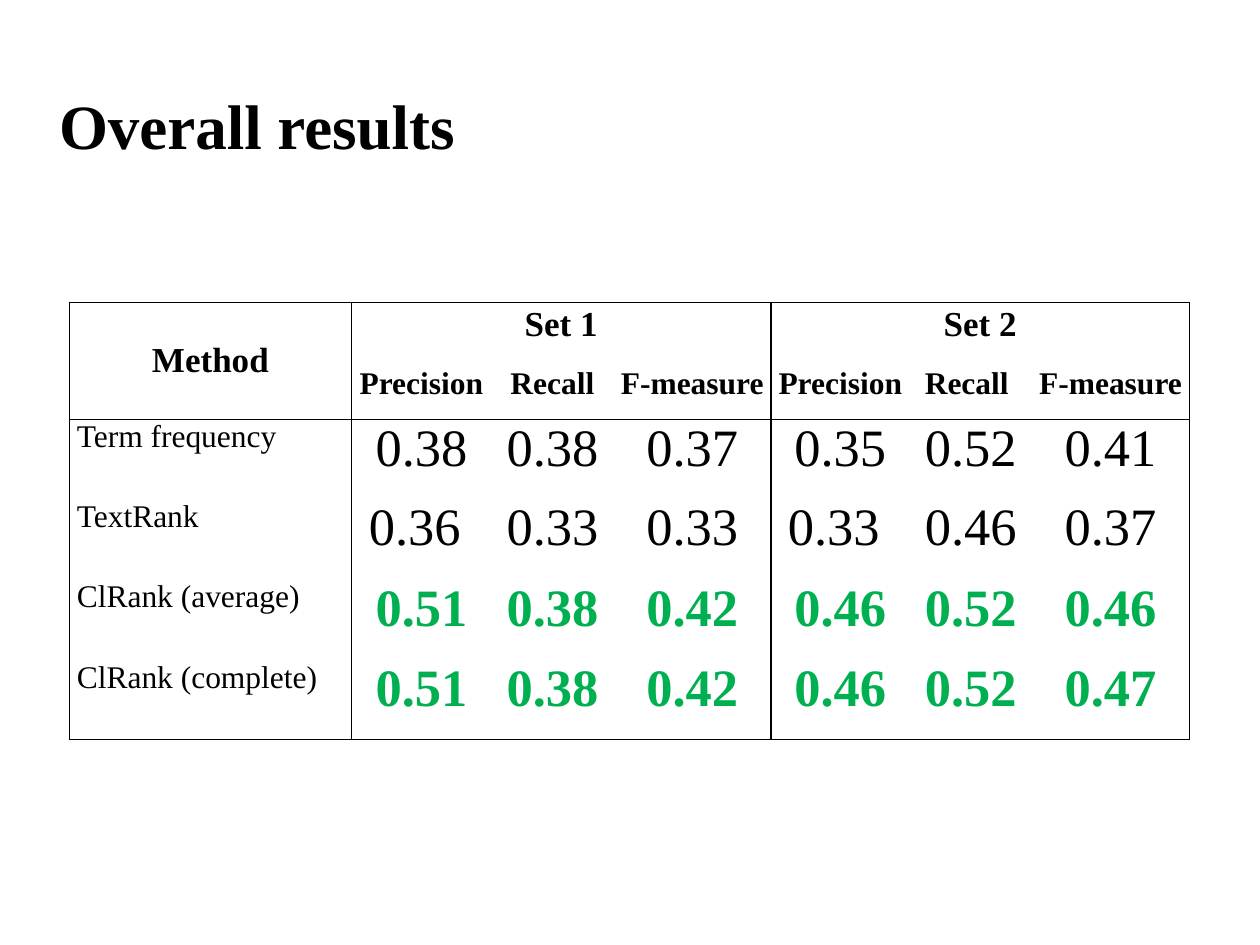
from dataclasses import dataclass

from lxml.etree import SubElement
from pptx import Presentation
from pptx.dml.color import RGBColor
from pptx.enum.text import MSO_ANCHOR, PP_ALIGN
from pptx.oxml.ns import qn
from pptx.util import Inches, Pt

BLACK, GREEN = "000000", "00B050"
WIDTHS = [2.24, 1.11, 0.97, 1.25, 1.1, 0.97, 1.25]
HEIGHTS = [0.36, 0.57, 0.63, 0.64, 0.64, 0.63]
LEFTS, RIGHTS = (0, 1, 4), (0, 3, 6)
TOPS, ENDS = (0, 2), (1, 5)


@dataclass(frozen=True)
class Style:
    size: int
    bold: bool = False
    color: str = BLACK
    align: PP_ALIGN = PP_ALIGN.CENTER
    anchor: MSO_ANCHOR = MSO_ANCHOR.TOP


@dataclass(frozen=True)
class Method:
    name: str
    scores: tuple[str, ...]
    best: bool = False


TITLE = Style(36, True, align=PP_ALIGN.LEFT)
HEAD = Style(20, True, anchor=MSO_ANCHOR.MIDDLE)
METRIC = Style(18, True, anchor=MSO_ANCHOR.MIDDLE)
NAME = Style(18, align=PP_ALIGN.LEFT)
SCORE = Style(30)
BEST = Style(30, True, GREEN)

METRICS = ("Precision", "Recall", "F-measure", "Precision", "Recall ", "F-measure")
METHODS = [
    Method("Term frequency", ("0.38", "0.38", "0.37", "0.35", "0.52", "0.41")),
    Method("TextRank", ("0.36 ", "0.33", "0.33", "0.33 ", "0.46", "0.37")),
    Method("ClRank (average)", ("0.51", "0.38", "0.42", "0.46", "0.52", "0.46"), True),
    Method("ClRank (complete)", ("0.51", "0.38", "0.42", "0.46", "0.52", "0.47"), True),
]


def paint(font, color: str) -> None:
    font.color.rgb = RGBColor.from_string(color)


def write(frame, text: str, style: Style) -> None:
    para = frame.paragraphs[0]
    para.alignment = style.align
    run = para.add_run()
    run.text = text
    run.font.name = "Times New Roman"
    run.font.size = Pt(style.size)
    run.font.bold = style.bold
    paint(run.font, style.color)


def fill(cell, text: str, style: Style) -> None:
    cell.vertical_anchor = style.anchor
    write(cell.text_frame, text, style)


def edge(cell, side: str, shown: bool) -> None:
    props = cell._tc.get_or_add_tcPr()
    line = SubElement(props, qn(f"a:ln{side}"), w=str(Pt(1)))
    if shown:
        solid = SubElement(line, qn("a:solidFill"))
        SubElement(solid, qn("a:srgbClr"), val=BLACK)
    else:
        SubElement(line, qn("a:noFill"))


def frame(cell, row: int, col: int) -> None:
    wide, high = (cell.span_width, cell.span_height) if cell.is_merge_origin else (1, 1)
    cell.margin_left = cell.margin_right = Inches(0.04 if col else 0.06)
    cell.margin_top = cell.margin_bottom = 0
    edge(cell, "L", col in LEFTS)
    edge(cell, "R", col + wide - 1 in RIGHTS)
    edge(cell, "T", row in TOPS)
    edge(cell, "B", row + high - 1 in ENDS)
    cell.fill.background()


def add_title(slide) -> None:
    box = slide.shapes.add_textbox(Inches(0.37), Inches(0.3), Inches(9.55), Inches(1.45))
    text = box.text_frame
    text.word_wrap = True
    text.vertical_anchor = MSO_ANCHOR.MIDDLE
    text.paragraphs[0].line_spacing = 0.9
    write(text, "Overall results", TITLE)


def add_results(slide) -> None:
    table = slide.shapes.add_table(
        len(HEIGHTS), len(WIDTHS), Inches(0.55), Inches(2.4),
        Inches(sum(WIDTHS)), Inches(sum(HEIGHTS)),
    ).table
    table.first_row = table.horz_banding = False
    for col, width in zip(table.columns, WIDTHS):
        col.width = Inches(width)
    for row, height in zip(table.rows, HEIGHTS):
        row.height = Inches(height)

    table.cell(0, 0).merge(table.cell(1, 0))
    for col in LEFTS[1:]:
        table.cell(0, col).merge(table.cell(0, col + 2))
    for row in range(len(HEIGHTS)):
        for col in range(len(WIDTHS)):
            frame(table.cell(row, col), row, col)

    for col, text in zip(LEFTS, ("Method", "Set 1", "Set 2")):
        fill(table.cell(0, col), text, HEAD)
    for col, text in enumerate(METRICS, 1):
        fill(table.cell(1, col), text, METRIC)
    for row, method in enumerate(METHODS, 2):
        fill(table.cell(row, 0), method.name, NAME)
        for col, text in enumerate(method.scores, 1):
            fill(table.cell(row, col), text, BEST if method.best else SCORE)


def main() -> None:
    deck = Presentation()
    deck.slide_width, deck.slide_height = Inches(10), Inches(7.5)
    slide = deck.slides.add_slide(deck.slide_layouts[6])
    add_results(slide)
    add_title(slide)
    deck.save("out.pptx")


if __name__ == "__main__":
    main()
